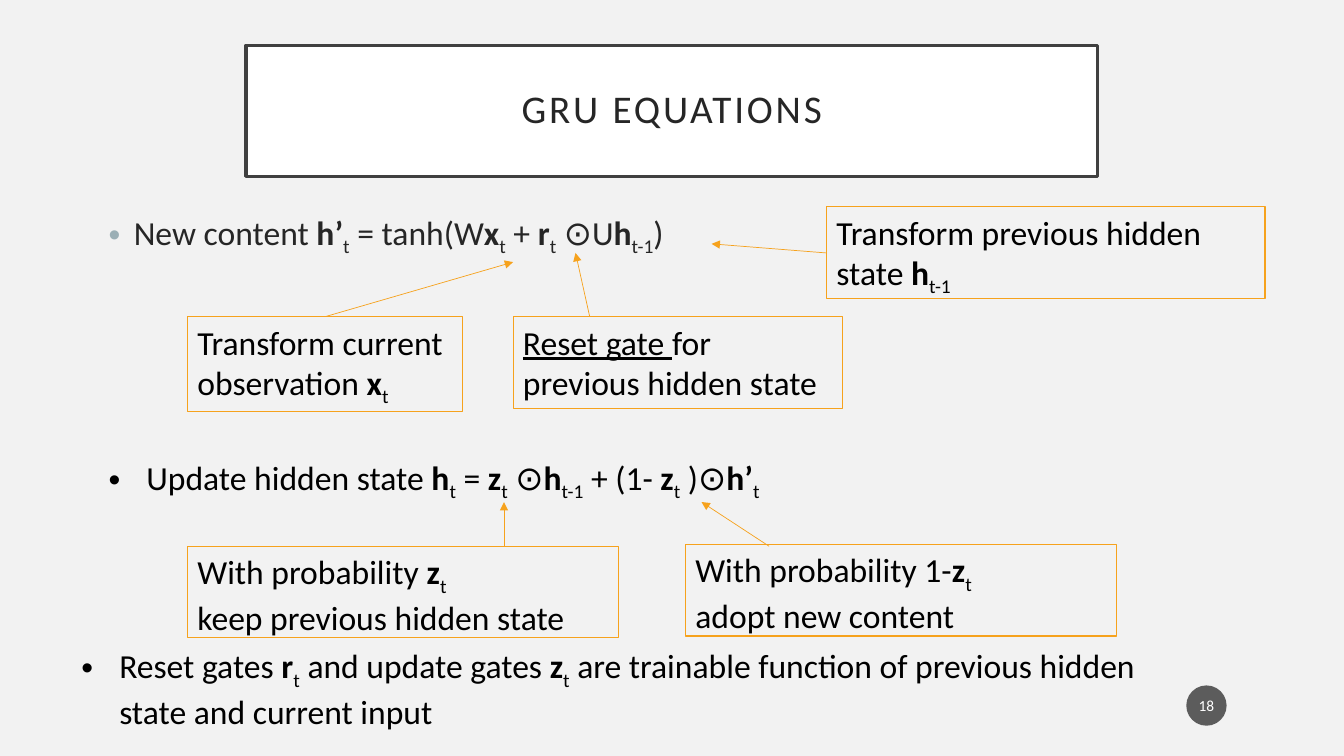
import itertools

import pptx
import pptx.dml.color
import pptx.enum.shapes
import pptx.enum.text
import pptx.oxml
import pptx.oxml.ns
import pptx.util

Pt = pptx.util.Pt
SHAPES = pptx.enum.shapes.MSO_SHAPE
ALIGN = pptx.enum.text.PP_ALIGN
ANCHOR = pptx.enum.text.MSO_ANCHOR

COLOURS = {"page": "F2F2F2", "white": "FFFFFF", "frame": "404040", "heading": "262626",
           "text": "000000", "bullet": "9BAFB5", "accent": "F6A21D", "badge": "1D1D1D"}

# Content: text parts split by "|" run in turn through plain, bold, subscript
PLAIN, BOLD, SUB, UNDERLINE = "plain", "bold", "sub", "underline"
EQUATION = (PLAIN, BOLD, SUB)

# (left, top, width, height), text, text colour, bullet colour, indent, space before
BULLETS = [
    ((70.5, 147.6, 805.7, 52.6), "New content |h’|t| = tanh(W|x|t| + |r|t| ⊙U|h|t-1|)",
     "heading", "bullet", 18, 10),
    ((70.5, 322.6, 688.3, 36),
     "Update hidden state |h|t| = |z|t| ⊙|h|t-1| + (1- |z|t| )⊙|h’|t", "text", "text", 27, 0),
    ((51.1, 457.2, 775.4, 65.5),
     "Reset gates |r|t| and update gates |z|t| are trainable function of "
     "previous hidden state and current input", "text", "text", 27, 0),
]

# (left, top, width, height), text, run styles, arrow start, arrow end
CALLOUTS = [
    ((133.9, 226.1, 196.6, 67.7), "Transform current observation |x|t", EQUATION,
     (232.6, 226.1), (366.5, 187.2)),
    ((590.4, 147.6, 313.2, 65.5), "Transform previous hidden state |h|t-1", EQUATION,
     (590.4, 180.7), (508.3, 174.2)),
    ((366.5, 226.1, 235.4, 65.5), "Reset gate |for previous hidden state", (UNDERLINE, PLAIN),
     (421.2, 226.1), (411.1, 180.7)),
    ((133.9, 390.2, 308.2, 65.5), "With probability |z|t|\nkeep previous hidden state", EQUATION,
     (360, 390.2), (360, 358.6)),
    ((489.6, 388.8, 308.2, 65.5), "With probability 1-|z|t|\nadopt new content", EQUATION,
     (549.4, 390.2), (501.1, 358.6)),
]


def rgb(name):
    return pptx.dml.color.RGBColor.from_string(COLOURS[name])


def add_xml(parent, tag, **attributes):
    child = pptx.oxml.parse_xml(f"<a:{tag} {pptx.oxml.ns.nsdecls('a')}/>")
    for key, value in attributes.items():
        child.set(key, value)
    parent.append(child)
    return child


def set_all(target, values):
    for key, value in values.items():
        setattr(target, key, value)


def add_box(page, place, shape=SHAPES.RECTANGLE, fill=None, line=None, width=0.75):
    box = page.shapes.add_shape(shape, *map(Pt, place))
    box.shadow.inherit = False
    if fill:
        box.fill.solid()
        box.fill.fore_color.rgb = rgb(fill)
    else:
        box.fill.background()
    if line:
        box.line.color.rgb = rgb(line)
        box.line.width = Pt(width)
    else:
        box.line.fill.background()
    return box


def write(box, text, styles=EQUATION, size=24, colour="text", align=ALIGN.LEFT,
          anchor=ANCHOR.TOP, **margins):
    frame = box.text_frame
    set_all(frame, {"word_wrap": True, "vertical_anchor": anchor})
    set_all(frame, {f"margin_{side}": Pt(value) for side, value in margins.items()})
    para = frame.paragraphs[0]
    para.alignment = align
    for part, style in zip(text.split("|"), itertools.cycle(styles)):
        if part.startswith("\n"):
            para.add_line_break()
        span = para.add_run()
        span.text = part.lstrip("\n")
        set_all(span.font, {"name": "Calibri", "size": Pt(size), "bold": style == BOLD,
                            "underline": style == UNDERLINE})
        span.font.color.rgb = rgb(colour)
        if style == SUB:
            span.font._element.set("baseline", "-25000")
    return para


def add_bullet(para, colour, indent):
    props = para._p.get_or_add_pPr()
    props.set("marL", str(Pt(indent)))
    props.set("indent", str(-Pt(indent)))
    add_xml(add_xml(props, "buClr"), "srgbClr", val=COLOURS[colour])
    add_xml(props, "buFont", typeface="Arial")
    add_xml(props, "buChar", char="•")


def add_arrow(page, start, end):
    arrow = page.shapes.add_connector(pptx.enum.shapes.MSO_CONNECTOR.STRAIGHT,
                                      *map(Pt, start + end))
    arrow.line.color.rgb = rgb("accent")
    arrow.line.width = Pt(0.5)
    add_xml(arrow.line._get_or_add_ln(), "tailEnd", type="triangle")
    add_xml(arrow._element.spPr, "effectLst")


def main():
    deck = pptx.Presentation()
    set_all(deck, {"slide_width": Pt(960), "slide_height": Pt(540)})
    page = deck.slides.add_slide(deck.slide_layouts[6])
    page.background.fill.solid()
    page.background.fill.fore_color.rgb = rgb("page")

    # Title
    title = add_box(page, (175.7, 32.4, 608.4, 93.6), fill="white", line="frame", width=2.5)
    para = write(title, "GRU EQUATIONS", size=28, colour="heading", align=ALIGN.CENTER,
                 anchor=ANCHOR.MIDDLE, left=14.4, right=14.4, top=14.4, bottom=14.4)
    para.line_spacing = 0.9
    para.runs[0].font._element.set("spc", "200")

    # Bulleted equations
    for place, text, colour, bullet_colour, indent, space in BULLETS:
        para = write(page.shapes.add_textbox(*map(Pt, place)), text, colour=colour)
        para.space_before = Pt(space)
        add_bullet(para, bullet_colour, indent)

    # Callouts with their arrows
    for place, text, styles, start, end in CALLOUTS:
        write(add_box(page, place, line="accent"), text, styles)
        add_arrow(page, start, end)

    # Page number badge
    badge = add_box(page, (847.4, 489.6, 28.8, 28.8), SHAPES.OVAL, fill="badge")
    add_xml(badge.fill._xPr.solidFill[0], "alpha", val="70000")
    write(badge, "18", size=11, colour="white", align=ALIGN.CENTER, anchor=ANCHOR.MIDDLE,
          left=1.4, right=1.4)

    deck.save("out.pptx")


if __name__ == "__main__":
    main()
